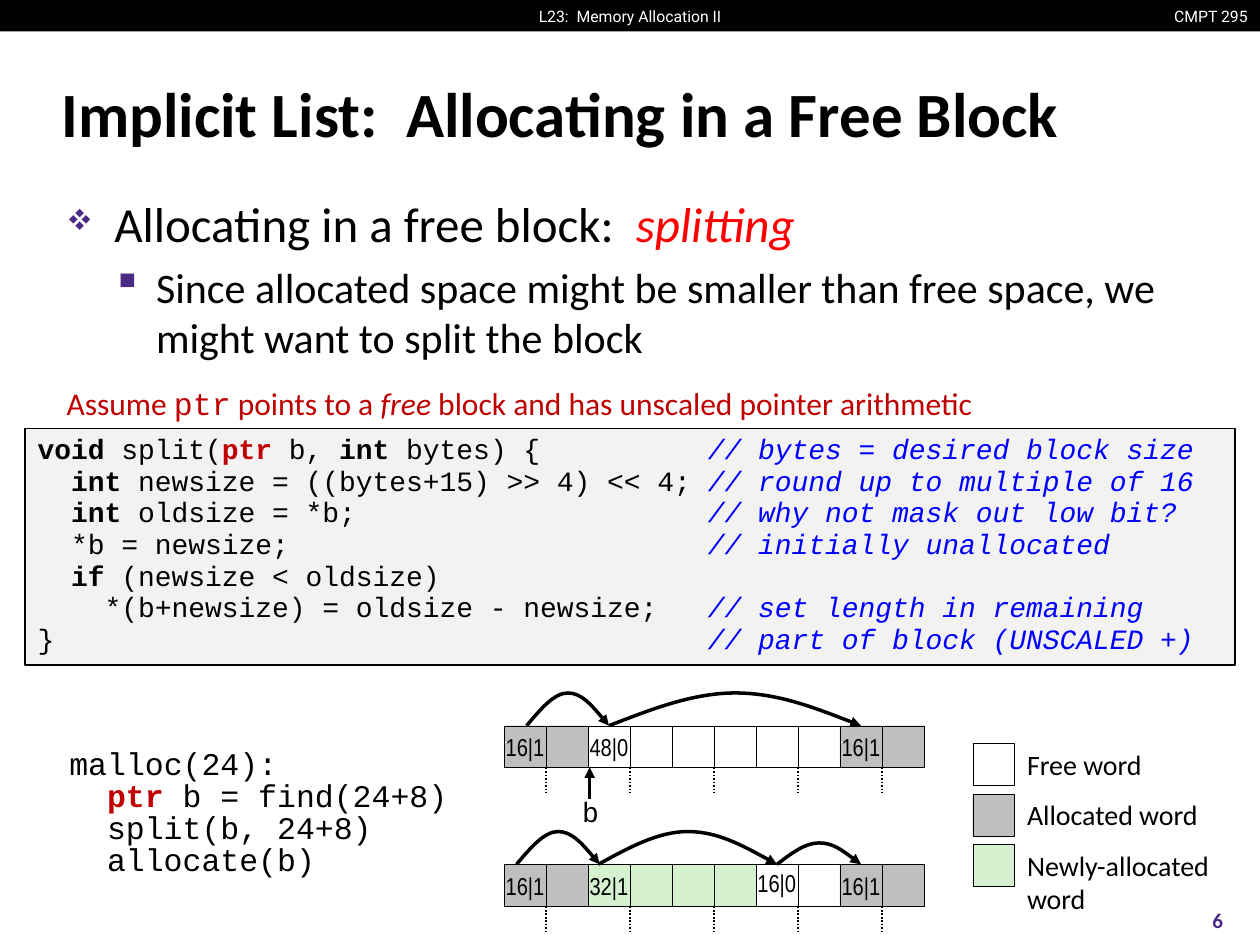
import dataclasses

import lxml.etree
import pptx
import pptx.dml.color
import pptx.enum.dml
import pptx.enum.shapes
import pptx.enum.text
import pptx.oxml.ns
import pptx.util

ALIGN = pptx.enum.text.PP_ALIGN
ANCHOR = pptx.enum.text.MSO_ANCHOR
Inches = pptx.util.Inches
Pt = pptx.util.Pt
qn = pptx.oxml.ns.qn

W, H = 10, 7.5
CELL = 1 / 3
HEAP_LEFT = 4
LEGEND_LEFT, LEGEND_TOP, LEGEND_STEP = 7.72, 5.9, 0.4
COMMENT_COLUMN = 40
CODE_COLUMNS_PER_INCH_AT_1PT = 120.3


@dataclasses.dataclass(frozen=True)
class Theme:
    black: str = "000000"
    white: str = "FFFFFF"
    purple: str = "4B2A85"
    red: str = "FF0000"
    dark_red: str = "C00000"
    blue: str = "0000FF"
    panel: str = "F2F2F2"
    allocated: str = "BFBFBF"
    new: str = "D5F1CF"
    body: str = "Calibri"
    mono: str = "Courier New"
    narrow: str = "Arial Narrow"
    header: str = "Roboto"
    bullets: str = "Wingdings"
    title_pt: int = 36
    bullet_pt: int = 28
    sub_pt: int = 24
    note_pt: int = 18
    code_pt: int = 16
    tag_pt: int = 14
    number_pt: int = 12
    header_pt: int = 9


T = Theme()
KEYWORD = dict(bold=True)
POINTER = dict(bold=True, color=T.dark_red)

SPLIT_CODE = [
    (0, [("void", KEYWORD), (" split(", {}), ("ptr", POINTER), (" b, ", {}),
         ("int", KEYWORD), (" bytes) {", {})], "// bytes = desired block size"),
    (2, [("int", KEYWORD), (" newsize = ((bytes+15) >> 4) << 4;", {})],
     "// round up to multiple of 16"),
    (2, [("int", KEYWORD), (" oldsize = *b;", {})], "// why not mask out low bit?"),
    (2, [("*b = newsize;", {})], "// initially unallocated"),
    (2, [("if", KEYWORD), (" (newsize < oldsize)", {})], ""),
    (4, [("*(b+newsize) = oldsize - newsize;", {})], "// set length in remaining"),
    (0, [("}", {})], "// part of block (UNSCALED +)"),
]
MALLOC_CODE = [
    (0, [("malloc(24):", {})], ""),
    (2, [("ptr ", POINTER), ("b = find(24+8)", {})], ""),
    (2, [("split(b, 24+8)", {})], ""),
    (2, [("allocate(b)", {})], ""),
]


def rgb(color):
    return pptx.dml.color.RGBColor.from_string(color)


def add_run(p, text, size, font=T.body, color=T.black, bold=False, italic=False):
    r = p.add_run()
    r.text = text
    r.font.size, r.font.name = Pt(size), font
    r.font.bold, r.font.italic = bold, italic
    r.font.color.rgb = rgb(color)


def setup_frame(tf, anchor=ANCHOR.TOP, wrap=True, margins=(0.1, 0.05)):
    tf.word_wrap, tf.vertical_anchor = wrap, anchor
    tf.margin_left = tf.margin_right = Inches(margins[0])
    tf.margin_top = tf.margin_bottom = Inches(margins[1])
    return tf


def add_text(s, box, **frame):
    sp = s.shapes.add_textbox(*map(Inches, box))
    return setup_frame(sp.text_frame, **frame)


def add_label(s, box, text, size, align=ALIGN.LEFT, anchor=ANCHOR.MIDDLE,
              wrap=True, margins=(0.1, 0.05), **style):
    p = add_text(s, box, anchor=anchor, wrap=wrap, margins=margins).paragraphs[0]
    p.alignment = align
    for i, line in enumerate(text.split("\n")):
        if i:
            p.add_line_break()
        add_run(p, line, size, **style)


def add_box(s, box, fill=None, line_pt=0.25):
    sp = s.shapes.add_shape(pptx.enum.shapes.MSO_SHAPE.RECTANGLE, *map(Inches, box))
    sp.shadow.inherit = False
    if fill:
        sp.fill.solid()
        sp.fill.fore_color.rgb = rgb(fill)
    else:
        sp.fill.background()
    if line_pt:
        sp.line.color.rgb, sp.line.width = rgb(T.black), Pt(line_pt)
    else:
        sp.line.fill.background()
    return sp


def add_bullet(p, char, percent, left, hang):
    pPr = p._p.get_or_add_pPr()
    pPr.set("marL", str(Inches(left)))
    pPr.set("indent", str(-Inches(hang)))
    color = lxml.etree.SubElement(pPr, qn("a:buClr"))
    lxml.etree.SubElement(color, qn("a:srgbClr"), val=T.purple)
    lxml.etree.SubElement(pPr, qn("a:buSzPct"), val=str(percent * 1000))
    lxml.etree.SubElement(pPr, qn("a:buFont"), typeface=T.bullets, charset="2")
    lxml.etree.SubElement(pPr, qn("a:buChar"), char=char)


def add_tab_stops(p, stops):
    tabs = lxml.etree.SubElement(p._p.get_or_add_pPr(), qn("a:tabLst"))
    for stop in stops:
        lxml.etree.SubElement(tabs, qn("a:tab"), pos=str(Inches(stop)), algn="l")


def add_code(tf, lines, size, spacing):
    char = size / CODE_COLUMNS_PER_INCH_AT_1PT
    for i, (indent, runs, comment) in enumerate(lines):
        p = tf.add_paragraph() if i else tf.paragraphs[0]
        p.alignment, p.line_spacing = ALIGN.LEFT, spacing
        columns = [n for n in (indent, COMMENT_COLUMN if comment else 0) if n]
        if columns:
            add_tab_stops(p, [n * char for n in columns])
        for j, (text, style) in enumerate(runs):
            lead = "\t" if indent and j == 0 else ""
            add_run(p, lead + text, size, T.mono, **style)
        if comment:
            add_run(p, "\t" + comment, size, T.mono, T.blue, italic=True)


def add_arrowhead(sp):
    lxml.etree.SubElement(sp.line._get_or_add_ln(), qn("a:tailEnd"), type="triangle")


def add_line(s, x, y1, y2, width, dotted=False):
    kind = pptx.enum.shapes.MSO_CONNECTOR.STRAIGHT
    c = s.shapes.add_connector(kind, *map(Inches, (x, y1, x, y2)))
    c.line.color.rgb, c.line.width = rgb(T.black), Pt(width)
    if dotted:
        c.line.dash_style = pptx.enum.dml.MSO_LINE.ROUND_DOT
    lxml.etree.SubElement(c._element.spPr, qn("a:effectLst"))
    return c


def bend_segments(sp):
    segments = list(sp._element.iter(qn("a:lnTo")))
    outline = segments[0].getparent()
    for i in range(0, len(segments), 3):
        curve = lxml.etree.SubElement(outline, qn("a:cubicBezTo"))
        for segment in segments[i:i + 3]:
            curve.append(segment[0])
            outline.remove(segment)


def add_arc(s, start, end, top, rise):
    lifts = (0, 0.5, 1, 1, 1, 0.5, 0)
    points = [(Inches(HEAP_LEFT + CELL * (start + (end - start) * i / 6)),
               Inches(top - rise * lift)) for i, lift in enumerate(lifts)]
    builder = s.shapes.build_freeform(*points[0])
    builder.add_line_segments(points[1:], close=False)
    sp = builder.convert_to_shape()
    bend_segments(sp)
    sp.shadow.inherit = False
    sp.fill.background()
    sp.line.color.rgb, sp.line.width = rgb(T.black), Pt(2)
    add_arrowhead(sp)


def add_heap(s, top, fills, tags, arcs):
    for i, fill in enumerate(fills):
        sp = add_box(s, (HEAP_LEFT + i * CELL, top, CELL, CELL), fill)
        if i in tags:
            p = setup_frame(sp.text_frame, ANCHOR.MIDDLE, False).paragraphs[0]
            p.alignment = ALIGN.CENTER
            add_run(p, tags[i], T.tag_pt, T.narrow)
    for start, end, rise in arcs:
        add_arc(s, start, end, top, rise)
    for column in range(1, len(fills), 2):
        x = HEAP_LEFT + column * CELL
        add_line(s, x, top + CELL, top + CELL + 0.2, 1, dotted=True)


def add_header(s):
    add_box(s, (0, 0, W, H / 30), T.black, line_pt=0)
    style = dict(size=T.header_pt, font=T.header, color=T.white, wrap=False)
    add_label(s, (4.17, 0, 1.66, H / 30), "L23:  Memory Allocation II",
              align=ALIGN.CENTER, **style)
    add_label(s, (9.19, 0, 0.81, H / 30), "CMPT 295", align=ALIGN.RIGHT, **style)


def add_body(s):
    tf = add_text(s, (0.43, 1.49, 9.15, 1.5))
    p = tf.paragraphs[0]
    p.space_before = Pt(0.2 * T.bullet_pt)
    add_bullet(p, "v", 60, 0.38, 0.38)
    add_run(p, "Allocating in a free block:  ", T.bullet_pt)
    add_run(p, "splitting", T.bullet_pt, color=T.red, italic=True)
    p = tf.add_paragraph()
    p.level, p.space_before = 1, Pt(0.2 * T.sub_pt)
    add_bullet(p, "§", 110, 0.71, 0.31)
    add_run(p, "Since allocated space might be smaller than free space, "
               "we might want to split the block", T.sub_pt)


def add_note(s):
    p = add_text(s, (0.43, 3, 9.15, 0.4)).paragraphs[0]
    for text, style in [("Assume ", {}), ("ptr", dict(font=T.mono)), (" points to a ", {}),
                        ("free", dict(italic=True)),
                        (" block and has unscaled pointer arithmetic", {})]:
        add_run(p, text, T.note_pt, color=T.dark_red, **style)


def add_legend(s):
    entries = [("Free word", T.white, CELL), ("Allocated word", T.allocated, CELL),
               ("Newly-allocated\nword", T.new, 0.6)]
    for i, (text, fill, height) in enumerate(entries):
        top = LEGEND_TOP + i * LEGEND_STEP
        add_box(s, (LEGEND_LEFT, top, CELL, CELL), fill)
        add_label(s, (LEGEND_LEFT + CELL, top, 1.8, height), text, T.code_pt, margins=(0.1, 0))


def main():
    prs = pptx.Presentation()
    prs.slide_width, prs.slide_height = Inches(W), Inches(H)
    s = prs.slides.add_slide(prs.slide_layouts[6])
    add_header(s)
    add_label(s, (0.39, 0.48, 9.19, 0.83), "Implicit List:  Allocating in a Free Block",
              T.title_pt, bold=True)
    add_body(s)
    add_label(s, (9.33, 7.1, 0.67, 0.4), "6", T.number_pt, ALIGN.CENTER,
              color=T.purple, bold=True)
    panel = add_box(s, (0.2, 3.4, 9.6, 1.88), T.panel, line_pt=1)
    add_code(setup_frame(panel.text_frame), SPLIT_CODE, T.code_pt, 0.94)
    add_note(s)
    add_code(add_text(s, (0.5, 5.9, 3.12, 1.13), margins=(0.05, 0.05)),
             MALLOC_CODE, T.note_pt, 0.85)
    add_legend(s)
    used = [T.allocated] * 2
    add_heap(s, 5.76, used + [None] * 6 + used, {0: "16|1", 2: "48|0", 8: "16|1"},
             [(0.54, 2.5, 0.26), (2.5, 8.5, 0.26)])
    add_arrowhead(add_line(s, 4.68, 6.34, 6.09, 2))
    add_label(s, (4.52, 6.26, CELL, 0.37), "b", T.code_pt, ALIGN.CENTER, ANCHOR.TOP,
              wrap=False, font=T.mono)
    add_heap(s, 6.86, used + [T.new] * 4 + [None] * 2 + used, {0: "16|1", 2: "32|1", 8: "16|1"},
             [(0.3, 2.28, 0.26), (2.25, 6.5, 0.26), (6.5, 8.5, 0.17)])
    add_label(s, (5.91, 6.84, 0.51, CELL), "16|0", T.tag_pt, ALIGN.CENTER, ANCHOR.TOP,
              wrap=False, font=T.narrow)
    prs.save("out.pptx")


if __name__ == "__main__":
    main()
